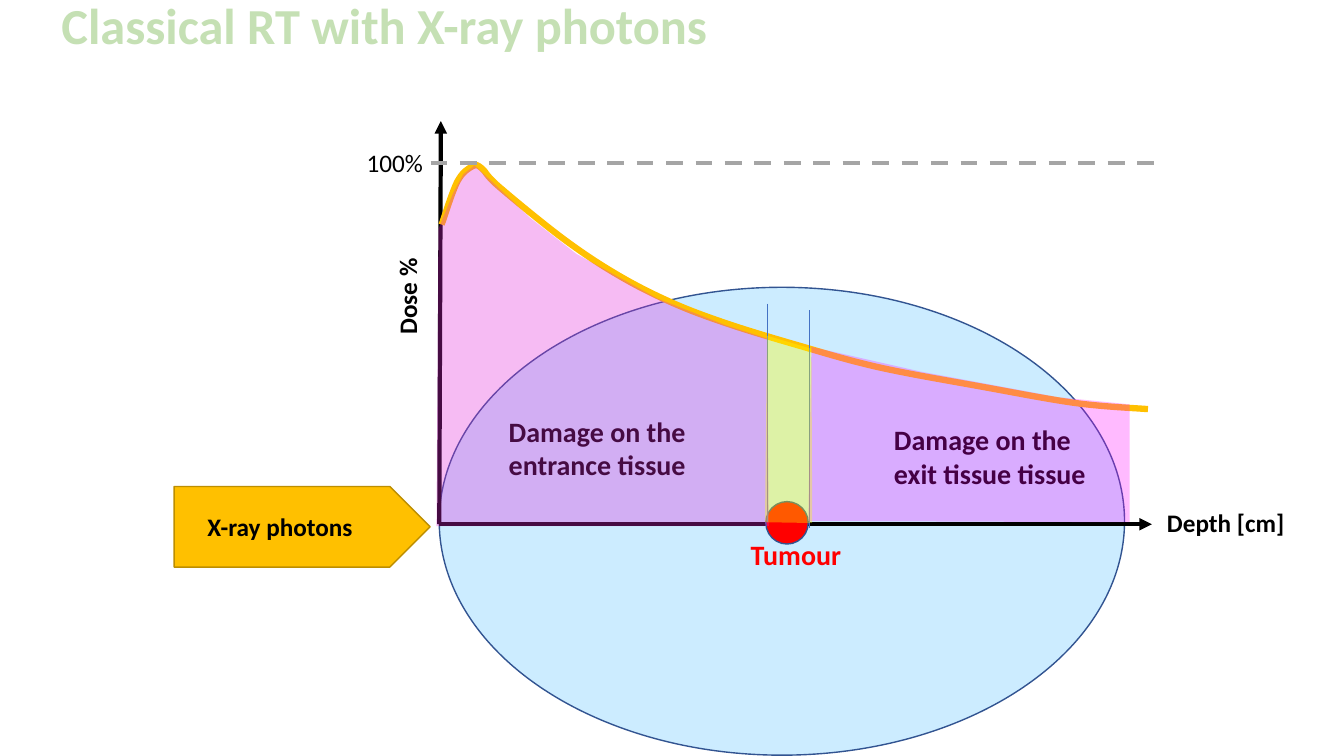
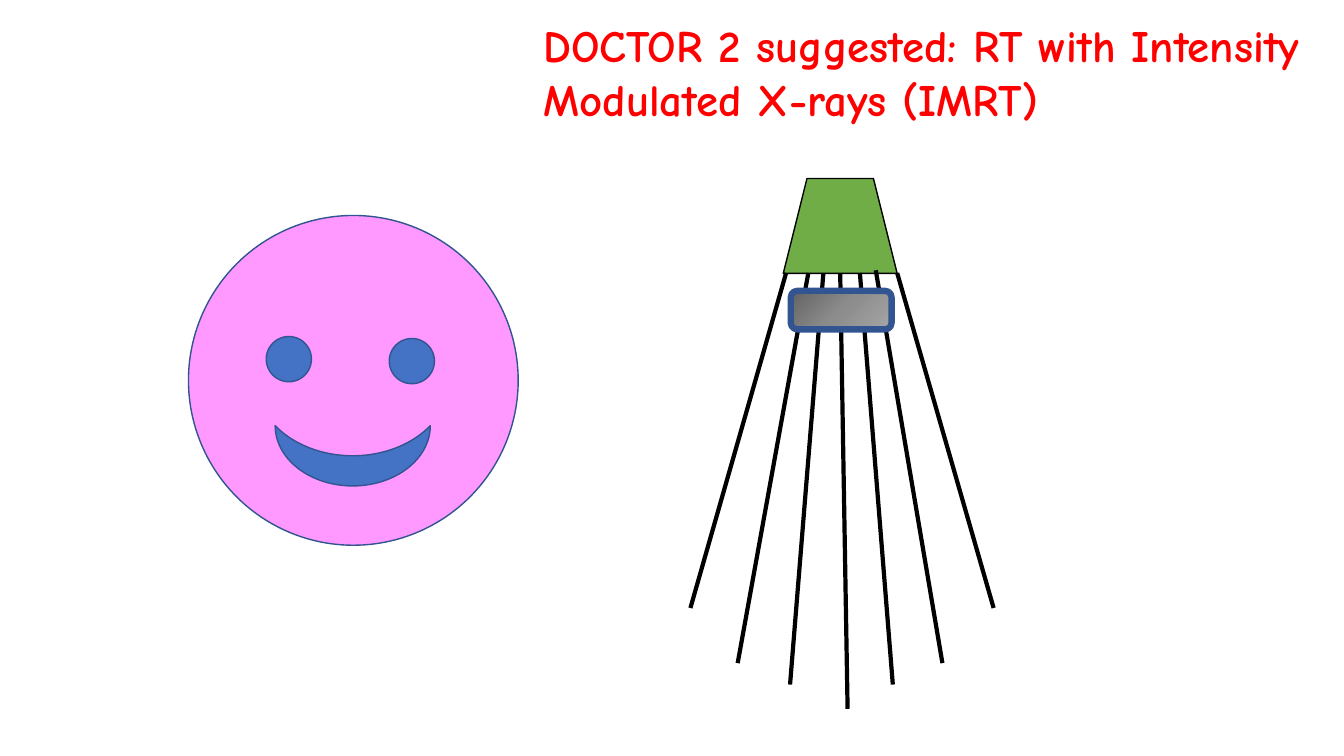
from copy import deepcopy
from dataclasses import dataclass

from lxml import etree
from pptx import Presentation
from pptx import util as u
from pptx.dml.color import RGBColor
from pptx.enum import dml, shapes, text
from pptx.oxml.ns import qn

Point = tuple[float, float]

BLACK = RGBColor(0x00, 0x00, 0x00)
RED = RGBColor(0xFF, 0x00, 0x00)
PALE_GREEN = RGBColor(0xC5, 0xE0, 0xB4)
GREEN = RGBColor(0x70, 0xAD, 0x47)
SKY = RGBColor(0xCC, 0xEC, 0xFF)
BLUE = RGBColor(0x44, 0x72, 0xC4)
NAVY = RGBColor(0x32, 0x54, 0x91)
AMBER = RGBColor(0xFF, 0xC0, 0x00)
OCHRE = RGBColor(0xBD, 0x8E, 0x00)
GRAY = RGBColor(0xA5, 0xA5, 0xA5)
PINK = RGBColor(0xFF, 0x99, 0xFF)
PURPLE = RGBColor(0xE2, 0x26, 0xD9)
MAGENTA = RGBColor(0xFF, 0x00, 0xFF)
YELLOW = RGBColor(0xFF, 0xFF, 0x00)
STEEL = [RGBColor(0x62, 0x62, 0x62), RGBColor(0x8C, 0x8C, 0x8C),
         RGBColor(0xA6, 0xA6, 0xA6)]

BODY_FONT = "Calibri"
COMIC_FONT = "Comic Neue"
LEFT = text.PP_ALIGN.LEFT
KIND = shapes.MSO_SHAPE


@dataclass
class Box:
    """Position and size in centimetres."""
    left: float
    top: float
    width: float
    height: float

    def emu(self) -> list[u.Length]:
        return [u.Cm(v) for v in (self.left, self.top, self.width, self.height)]


@dataclass
class Style:
    size: float = 18
    color: RGBColor = BLACK
    bold: bool = True
    font: str = BODY_FONT


@dataclass
class Label:
    words: str
    box: Box
    style: Style
    rotation: float = 0


@dataclass
class Stroke:
    start: Point
    end: Point
    color: RGBColor = BLACK
    width: float = 3
    arrow: bool = False
    dashed: bool = False


@dataclass
class Region:
    outline: list[Point]
    color: RGBColor
    opacity: int


def write(frame, words: str, style: Style, align=LEFT) -> None:
    para = frame.paragraphs[0]
    para.alignment = align
    span = para.add_run()
    span.text = words
    span.font.name = style.font
    span.font.size = u.Pt(style.size)
    span.font.bold = style.bold
    span.font.color.rgb = style.color


def add_page(deck, title: str, box: Box, style: Style, align=LEFT,
             spacing: float = 1.0, inset: float = 0.13):
    """Add a page with a formatted title placeholder."""
    page = deck.slides.add_slide(deck.slide_layouts[5])
    holder = page.shapes.title
    holder.left, holder.top, holder.width, holder.height = box.emu()
    frame = holder.text_frame
    frame.auto_size = text.MSO_AUTO_SIZE.NONE
    frame.vertical_anchor = text.MSO_ANCHOR.MIDDLE
    frame.margin_top = frame.margin_bottom = u.Cm(inset)
    write(frame, title, style, align)
    frame.paragraphs[0].line_spacing = spacing
    return page


def add_label(parent, label: Label) -> None:
    box = parent.add_textbox(*label.box.emu())
    box.rotation = label.rotation
    box.text_frame.word_wrap = True
    write(box.text_frame, label.words, label.style)


def add_preset(parent, kind, box: Box, fill: RGBColor, line: RGBColor = NAVY,
               width: float = 1):
    shape = parent.add_shape(kind, *box.emu())
    shape.shadow.inherit = False
    shape.fill.solid()
    shape.fill.fore_color.rgb = fill
    shape.line.color.rgb = line
    shape.line.width = u.Pt(width)
    return shape


def add_stroke(parent, stroke: Stroke):
    ends = [u.Cm(v) for v in (*stroke.start, *stroke.end)]
    line = parent.add_connector(shapes.MSO_CONNECTOR.STRAIGHT, *ends)
    line.line.color.rgb = stroke.color
    line.line.width = u.Pt(stroke.width)
    if stroke.dashed:
        line.line.dash_style = dml.MSO_LINE.DASH
    if stroke.arrow:
        etree.SubElement(line.line._get_or_add_ln(), qn("a:tailEnd"),
                         type="triangle")
    etree.SubElement(line._element.spPr, qn("a:effectLst"))
    return line


def add_outline(parent, points: list[Point], close: bool):
    first, *rest = [(u.Cm(x), u.Cm(y)) for x, y in points]
    builder = parent.build_freeform(*first)
    builder.add_line_segments(rest, close=close)
    shape = builder.convert_to_shape()
    shape.shadow.inherit = False
    return shape


def add_region(parent, region: Region) -> None:
    shape = add_outline(parent, region.outline, close=True)
    shape.fill.solid()
    shape.fill.fore_color.rgb = region.color
    shape.line.fill.background()
    color = shape._element.spPr.find(".//" + qn("a:srgbClr"))
    etree.SubElement(color, qn("a:alpha"), val=str(region.opacity * 1000))


def smooth(shape) -> None:
    """Turn the straight segments into a Catmull-Rom spline of Bezier curves."""
    geometry = shape._element.spPr.find(qn("a:custGeom"))
    knots = [(int(pt.get("x")), int(pt.get("y")))
             for pt in geometry.iter(qn("a:pt"))]
    padded = [knots[0], *knots, knots[-1]]
    segments = list(geometry.iter(qn("a:lnTo")))
    for segment, a, b, c, d in zip(segments, padded, padded[1:], padded[2:],
                                   padded[3:]):
        leave = [q + (r - p) / 6 for p, q, r in zip(a, b, c)]
        arrive = [r - (s - q) / 6 for q, r, s in zip(b, c, d)]
        curve = etree.Element(qn("a:cubicBezTo"))
        for x, y in (leave, arrive, c):
            etree.SubElement(curve, qn("a:pt"), x=str(round(x)), y=str(round(y)))
        segment.getparent().replace(segment, curve)


def fill_steel(shape) -> None:
    """Three-stop diagonal gradient."""
    shape.fill.gradient()
    shape.fill.gradient_angle = 315
    stops = shape._element.spPr.find(".//" + qn("a:gsLst"))
    middle = deepcopy(stops[0])
    middle.set("pos", "50000")
    stops.insert(1, middle)
    for stop, color in zip(shape.fill.gradient_stops, STEEL):
        stop.color.rgb = color


DOSE_KNOTS = [
    (11.13, 5.66), (11.53, 4.57), (11.91, 4.19), (12.14, 4.24), (12.57, 4.7),
    (14.2, 6.02), (15.57, 6.93), (16.92, 7.62), (18.31, 8.15), (20.07, 8.69),
    (22.12, 9.25), (24.77, 9.75), (27.13, 10.16), (28.93, 10.31)]

AXES = [Stroke((11.07, 13.21), (11.11, 3.05), arrow=True),
        Stroke((11.07, 13.21), (29.03, 13.21), arrow=True)]

DOSE_LIMIT = Stroke((10.85, 4.1), (29.24, 4.1), GRAY, dashed=True)
GUIDES = [Stroke((19.35, 7.65), (19.35, 13.16), BLUE, 0.5),
          Stroke((20.4, 7.82), (20.4, 13.31), BLUE, 0.5)]

PLOT_LABELS = [
    Label("Dose %", Box(8.84, 6.75, 2.84, 1.02), Style(), 270),
    Label("Tumour", Box(18.67, 13.41, 3.05, 1.12), Style(20, RED)),
    Label("Damage on the entrance tissue", Box(12.57, 10.31, 5.74, 1.96), Style(20)),
    Label("Damage on the exit tissue tissue", Box(22.28, 10.53, 5.74, 1.96), Style(20))]
DEPTH_LABEL = Label("Depth [cm]", Box(29.16, 12.67, 3.68, 1.02), Style())
LIMIT_LABEL = Label("100%", Box(8.99, 3.58, 2.54, 1.02), Style(bold=False))
BEAM_LABEL = Label("X-ray photons", Box(4.98, 12.75, 5.82, 1.02), Style())

REGIONS = [
    Region([(11, 13.26), (11.05, 5.77), (11.43, 4.85), (11.68, 4.39),
            (11.96, 4.17), (12.42, 4.6), (13.36, 5.49), (14.53, 6.4),
            (16.56, 7.52), (18.29, 8.2), (19.33, 8.53), (19.38, 13.26)],
           PURPLE, 31),
    Region([(20.37, 13.13), (20.45, 8.74), (23.22, 9.37), (26.67, 10.01),
            (28.47, 10.19), (28.47, 13.16)], MAGENTA, 27),
    Region([(19.28, 13.16), (20.47, 13.18), (20.45, 8.79), (19.33, 8.46)],
           YELLOW, 35)]

CENTRAL_RAY = Stroke((21.17, 6.89), (21.36, 17.86))
SIDE_RAYS = [Stroke(start, end) for start, end in [
    ((20.37, 6.88), (18.59, 16.71)), ((22.07, 6.81), (23.75, 16.71)),
    ((21.67, 6.88), (22.5, 17.25)), ((20.75, 6.88), (19.91, 17.25)),
    ((19.81, 6.88), (17.4, 15.32)), ((22.61, 6.88), (25.04, 15.32))]]


def build_dose_page(deck) -> None:
    page = add_page(deck, "Classical RT with X-ray photons",
                    Box(0, 0.03, 19.38, 1.37), Style(36, PALE_GREEN),
                    text.PP_ALIGN.CENTER, spacing=0.9, inset=0)
    # Body, axes and dose curve
    add_preset(page.shapes, KIND.OVAL, Box(11.07, 7.24, 17.27, 11.79), SKY)
    for axis in AXES:
        add_stroke(page.shapes, axis)
    for label in PLOT_LABELS:
        add_label(page.shapes, label)
    curve = add_outline(page.shapes, DOSE_KNOTS, close=False)
    smooth(curve)
    curve.fill.background()
    curve.line.color.rgb = AMBER
    curve.line.width = u.Pt(4.5)
    add_label(page.shapes, DEPTH_LABEL)
    # Tumour, guides and shaded regions
    add_preset(page.shapes, KIND.OVAL, Box(19.3, 12.64, 1.07, 1.07), RED)
    add_stroke(page.shapes, DOSE_LIMIT)
    add_label(page.shapes, LIMIT_LABEL)
    for guide in GUIDES:
        add_stroke(page.shapes, guide)
    for region in REGIONS:
        add_region(page.shapes, region)
    # Incoming beam
    beam = page.shapes.add_group_shape().shapes
    add_preset(beam, KIND.PENTAGON, Box(4.39, 12.26, 6.45, 2.03), AMBER, OCHRE)
    add_label(beam, BEAM_LABEL)


def build_imrt_page(deck) -> None:
    page = add_page(
        deck, "DOCTOR 2 suggested: RT with Intensity Modulated X-rays (IMRT)",
        Box(13.44, 0.3, 20.42, 3), Style(32, RED, font=COMIC_FONT))
    # Smiling face
    face = page.shapes.add_group_shape().shapes
    add_preset(face, KIND.OVAL, Box(4.75, 5.43, 8.31, 8.31), PINK)
    mouth = add_preset(face, KIND.MOON, Box(8.13, 9.53, 1.52, 3.91), BLUE)
    mouth.rotation = 270
    for left, top in [(6.71, 8.48), (9.81, 8.53)]:
        add_preset(face, KIND.OVAL, Box(left, top, 1.14, 1.14), BLUE)
    # Radiation source with its rays
    source = page.shapes.add_group_shape().shapes
    head = add_preset(source, KIND.TRAPEZOID, Box(19.74, 4.5, 2.87, 2.39),
                      GREEN, BLACK)
    add_stroke(source, CENTRAL_RAY).begin_connect(head, 2)
    for ray in SIDE_RAYS:
        add_stroke(source, ray)
    # Beam modulator
    modulator = add_preset(page.shapes, KIND.ROUNDED_RECTANGLE,
                           Box(19.93, 7.33, 2.54, 0.97), GRAY, width=4.5)
    fill_steel(modulator)


def main() -> None:
    deck = Presentation()
    deck.slide_width, deck.slide_height = u.Cm(33.87), u.Cm(19.05)
    build_dose_page(deck)
    build_imrt_page(deck)
    deck.save("out.pptx")


if __name__ == "__main__":
    main()
